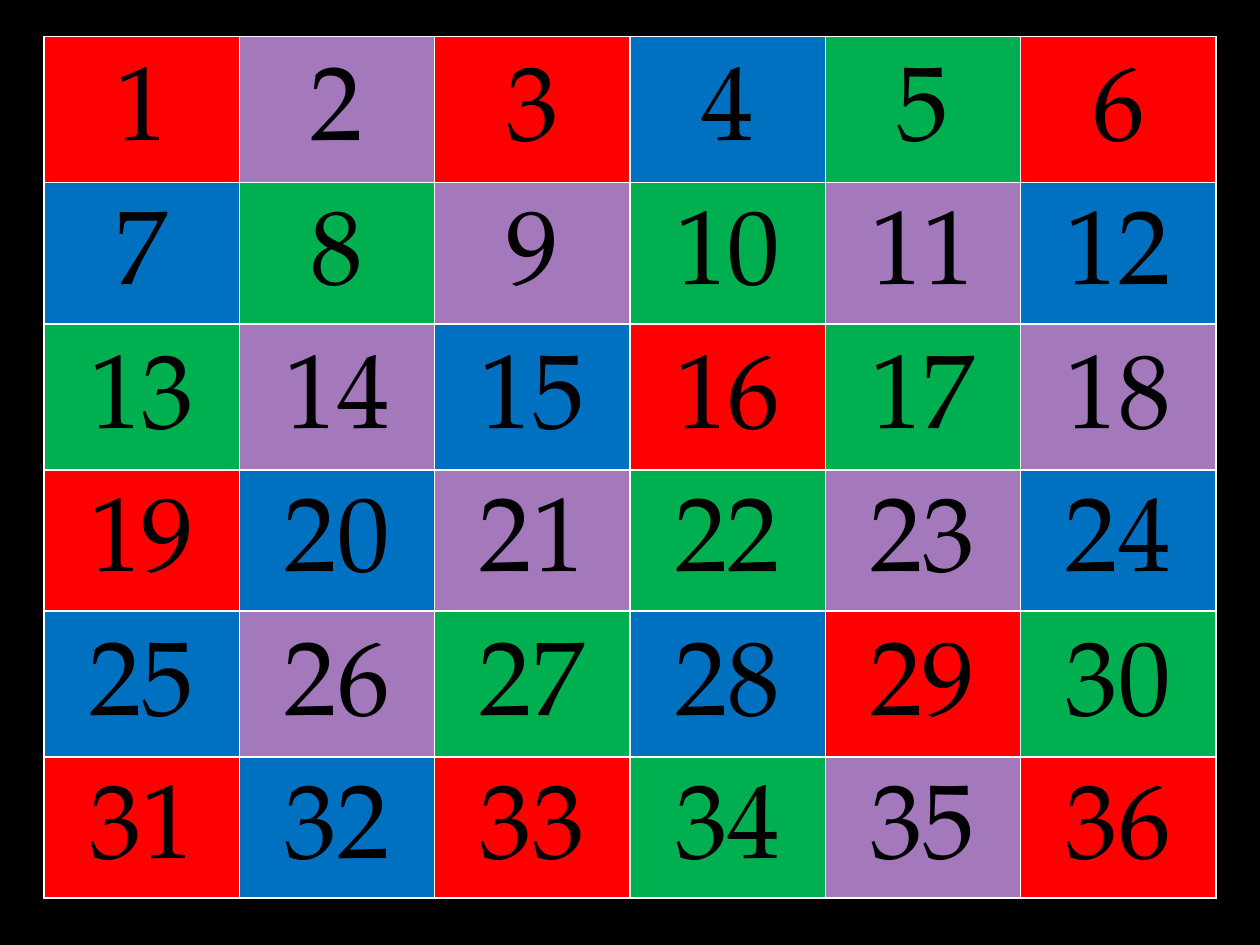
import pptx
import pptx.dml.color
import pptx.enum.text
import pptx.oxml
import pptx.oxml.ns
import pptx.util

COLORS = {
    "background": "000000",
    "number": "000000",
    "border": "FFFFFF",
    "R": "FF0000",
    "P": "A379BB",
    "B": "0070C0",
    "G": "00B050",
}
BOARD = ["RPRBGR", "BGPGPB", "GPBRGP", "RBPGPB", "BPGBRG", "RBRGPR"]
COLUMN_WIDTHS = [1.55] * 6
ROW_HEIGHTS = [1.16, 1.12] * 3
BOARD_TOP = 0.29
FONT = "TeX Gyre Pagella"


def rgb(name):
    return pptx.dml.color.RGBColor.from_string(COLORS[name])


def add_borders(cell):
    properties = cell._tc.get_or_add_tcPr()
    namespace = pptx.oxml.ns.nsdecls("a")
    for side in ("lnL", "lnR", "lnT", "lnB"):
        properties.append(pptx.oxml.parse_xml(
            f'<a:{side} {namespace} w="{pptx.util.Pt(1)}"><a:solidFill>'
            f'<a:srgbClr val="{COLORS["border"]}"/></a:solidFill></a:{side}>'
        ))


def format_cell(cell, number, color):
    add_borders(cell)
    cell.fill.solid()
    cell.fill.fore_color.rgb = rgb(color)
    cell.vertical_anchor = pptx.enum.text.MSO_ANCHOR.MIDDLE
    margin = pptx.util.Inches(0.01)
    cell.margin_left = cell.margin_right = margin
    cell.margin_top = cell.margin_bottom = margin
    paragraph = cell.text_frame.paragraphs[0]
    paragraph.alignment = pptx.enum.text.PP_ALIGN.CENTER
    paragraph.line_spacing = 1.15
    run = paragraph.add_run()
    run.text = str(number)
    run.font.name = FONT
    run.font.size = pptx.util.Pt(60)
    run.font.bold = False
    run.font.color.rgb = rgb("number")


def add_number_board(slide, left, top, width, height):
    table = slide.shapes.add_table(
        len(BOARD), len(BOARD[0]), left, top, width, height
    ).table
    table.first_row = False
    table.horz_banding = False
    for column, share in zip(table.columns, COLUMN_WIDTHS):
        column.width = int(width * share / sum(COLUMN_WIDTHS))
    for row, share in zip(table.rows, ROW_HEIGHTS):
        row.height = int(height * share / sum(ROW_HEIGHTS))
    for number, (cell, color) in enumerate(zip(table.iter_cells(), "".join(BOARD)), 1):
        format_cell(cell, number, color)


def main():
    presentation = pptx.Presentation()
    presentation.slide_width = pptx.util.Inches(10)
    presentation.slide_height = pptx.util.Inches(7.5)
    slide = presentation.slides.add_slide(presentation.slide_layouts[6])
    slide.background.fill.solid()
    slide.background.fill.fore_color.rgb = rgb("background")
    width = pptx.util.Inches(sum(COLUMN_WIDTHS))
    height = pptx.util.Inches(sum(ROW_HEIGHTS))
    left = (presentation.slide_width - width) // 2
    add_number_board(slide, left, pptx.util.Inches(BOARD_TOP), width, height)
    presentation.save("out.pptx")


if __name__ == "__main__":
    main()
